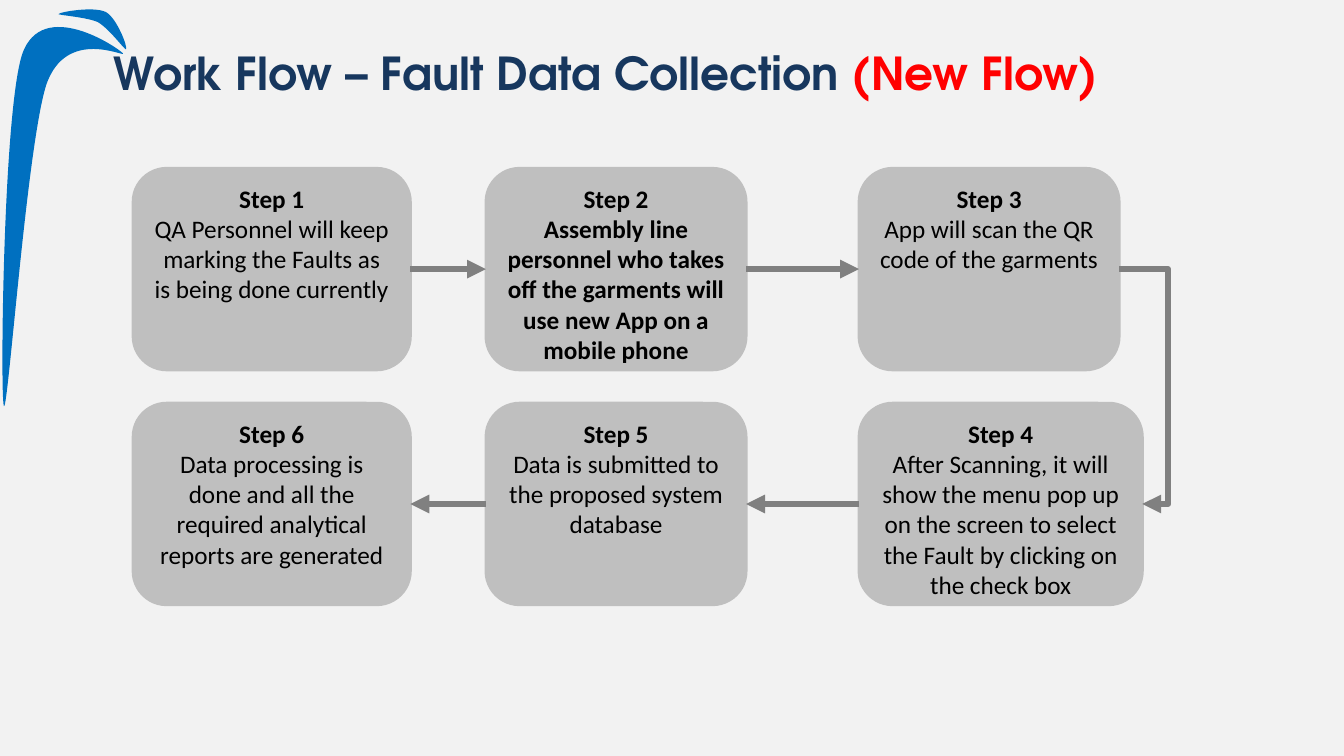
from lxml.etree import SubElement
from pptx import Presentation
from pptx.dml.color import RGBColor
from pptx.enum.shapes import MSO_CONNECTOR, MSO_SHAPE
from pptx.enum.text import MSO_ANCHOR, PP_ALIGN
from pptx.oxml.ns import qn
from pptx.util import Pt

PX = 9144  # EMU per px, 100 px to the inch
COLORS = {"bg": "F2F2F2", "swoosh": "0070C0", "title": "17375E", "new": "FF0000",
          "box": "BFBFBF", "arrow": "808080", "text": "000000"}

# Step number, left, top, width, body, bold body
BOX_H = 200
ROW_1, ROW_2 = 167, 400
COL_1, COL_2, COL_3 = 132, 482, 852
STEPS = [
    (1, COL_1, ROW_1, 275,
     "QA Personnel will keep marking the Faults as is being done currently", False),
    (2, COL_2, ROW_1, 258,
     "Assembly line personnel who takes off the garments will use new App on a mobile phone", True),
    (3, COL_3, ROW_1, 258, "App will scan the QR code of the garments", False),
    (4, COL_3, ROW_2, 281,
     "After Scanning, it will show the menu pop up on the screen to select the Fault "
     "by clicking on the check box", False),
    (5, COL_2, ROW_2, 258, "Data is submitted to the proposed system database", False),
    (6, COL_1, ROW_2, 275,
     "Data processing is done and all the required analytical reports are generated", False),
]

# Start point, then Bezier segments of two controls and an end, in px
SWOOSHES = [
    [(122, 53), (118, 48), (42, -4), (22, 54), (3, 113), (0, 398), (4, 403),
     (8, 408), (27, 143), (46, 84), (66, 26), (126, 58), (122, 53)],
    [(58, 14), (57, 15), (86, 17), (97, 22), (108, 28), (124, 50), (125, 49),
     (127, 47), (116, 18), (105, 12), (93, 6), (59, 12), (58, 14)],
]


def rgb(name):
    return RGBColor.from_string(COLORS[name])


def px(*values):
    return [v * PX for v in values]


def style_run(r, size, font, color, bold):
    r.font.size = Pt(size)
    r.font.name = font
    r.font.bold = bold
    r.font.color.rgb = rgb(color)


def add_swoosh(s, points):
    fb = s.shapes.build_freeform(*points[0], scale=PX)
    fb.add_line_segments(points[1:], close=True)
    sp = fb.convert_to_shape()
    # Every three line points become one Bezier segment
    lines = list(sp._element.iter(qn("a:lnTo")))
    for i in range(0, len(points) - 1, 3):
        first, *others = lines[i:i + 3]
        curve = first.makeelement(qn("a:cubicBezTo"))
        first.addprevious(curve)
        for line in (first, *others):
            curve.append(line[0])
            line.getparent().remove(line)
    sp.shadow.inherit = False
    sp.fill.solid()
    sp.fill.fore_color.rgb = rgb("swoosh")
    sp.line.fill.background()
    s.shapes._spTree.insert(2, sp._element)  # behind the title


def set_title(s):
    title = s.shapes.title
    title.left, title.top, title.width, title.height = px(100, 25, 1092, 80)
    tf = title.text_frame
    tf.word_wrap = True
    tf.vertical_anchor = MSO_ANCHOR.BOTTOM
    tf.margin_left, tf.margin_right, tf.margin_top, tf.margin_bottom = px(13, 13, 6, 6)
    p = tf.paragraphs[0]
    p.alignment = PP_ALIGN.LEFT
    for text, color in (("Work Flow – Fault Data Collection ", "title"), ("(New Flow)", "new")):
        r = p.add_run()
        r.text = text
        style_run(r, 32.4, "TeX Gyre Adventor", color, True)


def add_step(s, number, left, top, width, body, bold):
    sp = s.shapes.add_shape(MSO_SHAPE.ROUNDED_RECTANGLE, *px(left, top, width, BOX_H))
    sp.shadow.inherit = False
    sp.fill.solid()
    sp.fill.fore_color.rgb = rgb("box")
    sp.line.color.rgb = rgb("box")
    sp.line.width = Pt(2)
    tf = sp.text_frame
    tf.word_wrap = True
    tf.vertical_anchor = MSO_ANCHOR.TOP
    tf.text = f"Step {number}\n{body}"
    for p, is_bold in zip(tf.paragraphs, (True, bold)):
        p.alignment = PP_ALIGN.CENTER
        style_run(p.runs[0], 18, "Calibri", "text", is_bold)
    return sp


def add_arrow(s, source, source_side, target, target_side, kind=MSO_CONNECTOR.STRAIGHT):
    cxn = s.shapes.add_connector(kind, 0, 0, 0, 0)
    cxn.begin_connect(source, source_side)
    cxn.end_connect(target, target_side)
    cxn.line.color.rgb = rgb("arrow")
    cxn.line.width = Pt(4.5)
    SubElement(cxn.line._get_or_add_ln(), qn("a:tailEnd"), type="triangle")
    SubElement(cxn._element.spPr, qn("a:effectLst"))
    return cxn


def set_bend(cxn, ratio):
    guides = cxn._element.spPr.find(qn("a:prstGeom")).get_or_add_avLst()
    SubElement(guides, qn("a:gd"), name="adj1", fmla=f"val {round(ratio * 100000)}")


def main():
    prs = Presentation()
    prs.slide_width, prs.slide_height = px(1333, 750)
    s = prs.slides.add_slide(prs.slide_layouts[5])
    s.background.fill.solid()
    s.background.fill.fore_color.rgb = rgb("bg")

    # Title and corner decoration
    set_title(s)
    for points in SWOOSHES:
        add_swoosh(s, points)

    # Steps run right along the first row, then left along the second
    boxes = [add_step(s, *step) for step in STEPS]
    for i in (0, 1):
        add_arrow(s, boxes[i], 3, boxes[i + 1], 1)
    for i in (3, 4):
        add_arrow(s, boxes[i], 1, boxes[i + 1], 3)
    turn = add_arrow(s, boxes[2], 3, boxes[3], 3, MSO_CONNECTOR.ELBOW)
    set_bend(turn, 2.11)

    prs.save("out.pptx")


if __name__ == "__main__":
    main()
